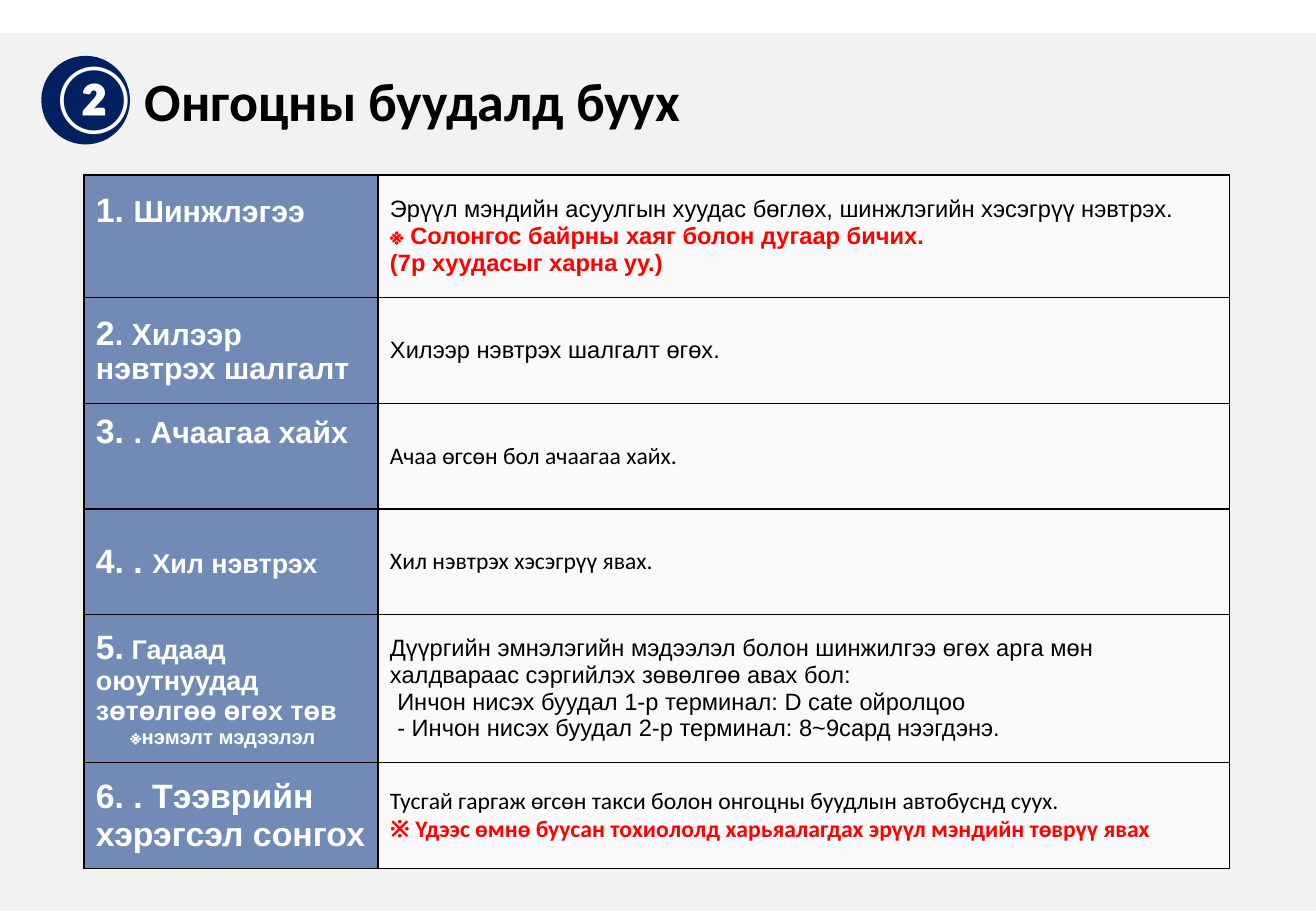
from lxml import etree
from pptx import Presentation
from pptx import util as u
from pptx.dml.color import RGBColor
from pptx.enum import shapes, text
from pptx.oxml import ns

WIDE, HIGH = 10.83, 7.5
HUE = {"back": "F2F2F2", "navy": "002060", "blue": "2F5597",
       "white": "FFFFFF", "black": "000000", "red": "FF0000"}
TITLE = "Онгоцны буудалд буух"
MARK = "②"
PLACE = {
    "band": (0, 3.6, 100, 96.4),
    "disc": (3.14, 6.13, 6.74, 9.73),
    "mark": (2.86, 5.33, 7.02, 10.27),
    "title": (10.06, 6.8, 43.95, 8.53),
    "table": (6.37, 19.2, 87.07, 75.87),
}
COLS = (2.42, 7.01)
ROWS = (1.01, 0.87, 0.87, 0.87, 1.22, 0.87)
TOPS = {0: 0.14, 2: 0.08}

# HEADS: per row, lines of (indent, runs of (words, size))
HEADS = [
    [(0, [("1. ", 20), ("Шинжлэгээ", 18)])],
    [(0, [("2", 20), (". Хилээр нэвтрэх шалгалт", 18)])],
    [(0, [("3. ", 20), (". Ачаагаа хайх", 18)])],
    [(0, [("4. . ", 20), ("Хил нэвтрэх", 16)])],
    [(0, [("5.", 20), (" Гадаад оюутнуудад зөтөлгөө өгөх төв", 16)]),
     (0.28, [("※нэмэлт мэдээлэл", 12)])],
    [(0, [("6. . Тээврийн хэрэгсэл сонгох", 20)])],
]
# NOTES: per row, font and lines of (indent, words, hue)
NOTES = [
    ("Arial", [
        (0, "Эрүүл мэндийн асуулгын хуудас бөглөх, шинжлэгийн хэсэгрүү нэвтрэх.", "black"),
        (0, "※ Солонгос байрны хаяг болон дугаар бичих.", "red"),
        (0, "(7p хуудасыг харна уу.)", "red")]),
    ("Arial", [(0, "Хилээр нэвтрэх шалгалт өгөх.", "black")]),
    ("Calibri", [(0, "Ачаа өгсөн бол ачаагаа хайх.", "black")]),
    ("Calibri", [(0, "Хил нэвтрэх хэсэгрүү явах.", "black")]),
    ("Arial", [
        (0, "Дүүргийн эмнэлэгийн мэдээлэл болон шинжилгээ өгөх арга мөн "
            "халдвараас сэргийлэх зөвөлгөө авах бол:", "black"),
        (0.06, "Инчон нисэх буудал 1-р терминал: D cate ойролцоо", "black"),
        (0.06, "- Инчон нисэх буудал 2-р терминал: 8~9сард нээгдэнэ.", "black")]),
    ("Calibri", [
        (0, "Тусгай гаргаж өгсөн такси болон онгоцны буудлын автобуснд суух.", "black"),
        (0, "※ Үдээс өмнө буусан тохиололд харьяалагдах эрүүл мэндийн төврүү явах", "red")]),
]


def area(name):
    x, y, w, h = PLACE[name]
    return [u.Inches(part * full / 100)
            for part, full in ((x, WIDE), (y, HIGH), (w, WIDE), (h, HIGH))]


def tint(fill, hue):
    fill.solid()
    fill.fore_color.rgb = RGBColor.from_string(HUE[hue])


def write(line, words, size, face, hue, bold=True):
    run = line.add_run()
    run.text = words
    run.font.size = u.Pt(size)
    run.font.name = face
    run.font.bold = bold
    run.font.color.rgb = RGBColor.from_string(HUE[hue])


def draw(group, kind, name, hue):
    shape = group.add_shape(kind, *area(name))
    shape.shadow.inherit = False
    tint(shape.fill, hue)
    shape.line.fill.background()
    return shape


def label(shape, words, size, hue):
    frame = shape.text_frame
    frame.word_wrap = False
    frame.auto_size = text.MSO_AUTO_SIZE.SHAPE_TO_FIT_TEXT
    frame.vertical_anchor = text.MSO_ANCHOR.TOP
    line = frame.paragraphs[0]
    line.alignment = text.PP_ALIGN.LEFT
    write(line, words, size, "Calibri", hue)


def finish(cell, hue):
    tint(cell.fill, hue)
    props = cell._tc.tcPr
    color = props.find(".//" + ns.qn("a:srgbClr"))
    etree.SubElement(color, ns.qn("a:alpha"), val="66000")
    for spot, side in enumerate(("lnL", "lnR", "lnT", "lnB")):
        edge = etree.Element(ns.qn("a:" + side), w=str(u.Pt(1)))
        ink = etree.SubElement(edge, ns.qn("a:solidFill"))
        etree.SubElement(ink, ns.qn("a:srgbClr"), val=HUE["black"])
        props.insert(spot, edge)


def fill_cell(cell, lines, face, hue):
    cell.vertical_anchor = text.MSO_ANCHOR.MIDDLE
    frame = cell.text_frame
    for spot, (indent, runs) in enumerate(lines):
        line = frame.add_paragraph() if spot else frame.paragraphs[0]
        if indent:
            line._p.get_or_add_pPr().set("marL", str(u.Inches(indent)))
        for words, size, ink, bold in runs:
            write(line, words, size, face, ink, bold)
    finish(cell, hue)


def main():
    deck = Presentation()
    deck.slide_width, deck.slide_height = u.Inches(WIDE), u.Inches(HIGH)
    slide = deck.slides.add_slide(deck.slide_layouts[5])

    band = draw(slide.shapes, shapes.MSO_SHAPE.RECTANGLE, "band", "back")
    slide.shapes._spTree.insert(2, band._element)

    badge = slide.shapes.add_group_shape()
    draw(badge.shapes, shapes.MSO_SHAPE.OVAL, "disc", "navy")
    label(badge.shapes.add_textbox(*area("mark")), MARK, 40, "white")

    title = slide.shapes.title
    title.left, title.top, title.width, title.height = area("title")
    label(title, TITLE, 32, "black")

    table = slide.shapes.add_table(len(ROWS), len(COLS), *area("table")).table
    table.first_row = table.horz_banding = False
    for col, width in zip(table.columns, COLS):
        col.width = u.Inches(width)
    for spot, (tall, head, (face, note)) in enumerate(zip(ROWS, HEADS, NOTES)):
        table.rows[spot].height = u.Inches(tall)
        left = [(indent, [(words, size, "white", True) for words, size in runs])
                for indent, runs in head]
        right = [(indent, [(words, 14, hue, hue == "red")])
                 for indent, words, hue in note]
        fill_cell(table.cell(spot, 0), left, "Arial", "blue")
        fill_cell(table.cell(spot, 1), right, face, "white")
    for spot, top in TOPS.items():
        cell = table.cell(spot, 0)
        cell.vertical_anchor = text.MSO_ANCHOR.TOP
        cell.margin_top = u.Inches(top)

    deck.save("out.pptx")


if __name__ == "__main__":
    main()
